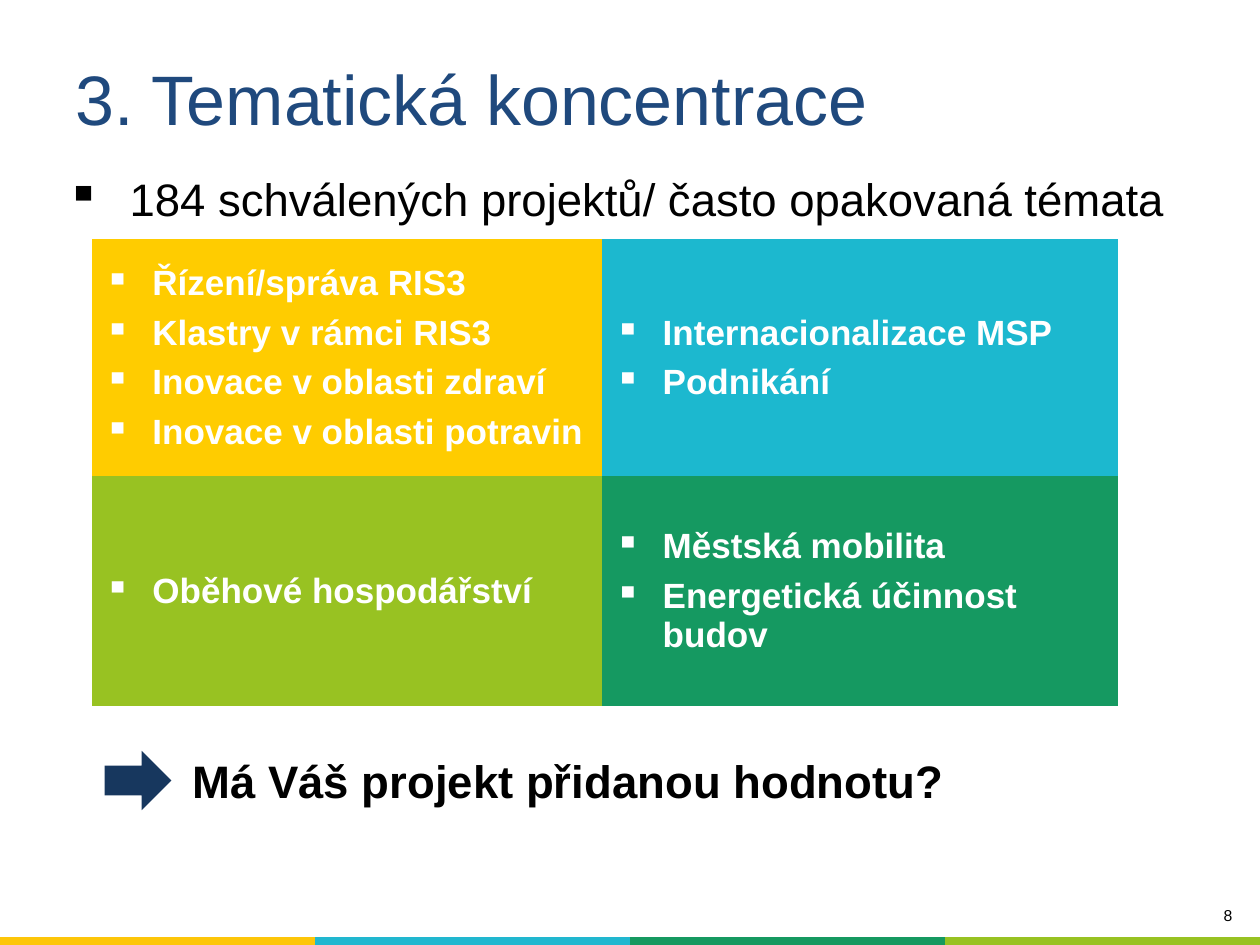
import pptx
import pptx.util
import pptx.dml.color
import pptx.enum.shapes
import pptx.enum.text
from lxml import etree

Inches, Pt = pptx.util.Inches, pptx.util.Pt
ALIGN = pptx.enum.text.PP_ALIGN
MIDDLE = pptx.enum.text.MSO_ANCHOR.MIDDLE
TOP = pptx.enum.text.MSO_ANCHOR.TOP
FONT = "Arial"
PLAIN_TABLE = "{2D5ABB26-0587-4C30-8999-92F81FD0307C}"

# Content: text, box, anchor, bullet indent, paragraph format, font format
TEXTS = [
    ("3. Tematická koncentrace", (0.5, 0.47, 9, 0.61), MIDDLE, 0,
     {}, {"size": 40, "color": "1F497D"}),
    ("184 schválených projektů/ často opakovaná témata", (0.43, 1.31, 8.98, 0.55), TOP, 0.5,
     {}, {"size": 26, "color": "000000"}),
    ("Má Váš projekt přidanou hodnotu?", (1.43, 5.94, 7.9, 0.5), MIDDLE, 0,
     {}, {"size": 26, "color": "000000", "bold": True}),
    ("8", (7.91, 7.14, 1.97, 0.31), TOP, 0,
     {"alignment": ALIGN.RIGHT}, {"size": 9, "color": "000000"}),
]
# Each topic cell: fill, space after, lines
TOPICS = [
    [("FFCC00", 6, ["Řízení/správa RIS3", "Klastry v rámci RIS3",
                    "Inovace v oblasti zdraví", "Inovace v oblasti potravin"]),
     ("1CB8CF", 6, ["Internacionalizace MSP", "Podnikání"])],
    [("98C222", 0, ["Oběhové hospodářství"]),
     ("159961", 6, ["Městská mobilita", "Energetická účinnost budov"])],
]
TOPIC_FONT = {"size": 20, "color": "FFFFFF", "bold": True}
STRIPE = [[(color, 0, []) for color in ("FDC609", "21B7CF", "159960", "98C222")]]


def paint(fill, color):
    fill.solid()
    fill.fore_color.rgb = pptx.dml.color.RGBColor.from_string(color)


def write(paragraph, text, indent, layout, style):
    """Fill one paragraph, with a square bullet when it has an indent."""
    if indent:
        properties = paragraph._p.get_or_add_pPr()
        properties.set("marL", str(Inches(indent)))
        properties.set("indent", str(-Inches(indent)))
        bullet = etree.SubElement(properties, pptx.oxml.ns.qn("a:buChar"))
        bullet.set("char", "▪")
    for name, value in layout.items():
        setattr(paragraph, name, value)
    run = paragraph.add_run()
    run.text = text
    font_values = {"name": FONT, "size": Pt(style["size"]), "bold": style.get("bold", False)}
    for name, value in font_values.items():
        setattr(run.font, name, value)
    paint(run.font.fill, style["color"])


def add_grid(slide, left, top, widths, heights, cells):
    """Add a table of coloured cells with bulleted lines."""
    box = [Inches(v) for v in (left, top, sum(widths), sum(heights))]
    grid = slide.shapes.add_table(len(heights), len(widths), *box).table
    grid._tbl.tblPr.find(pptx.oxml.ns.qn("a:tableStyleId")).text = PLAIN_TABLE
    for column, width in zip(grid.columns, widths):
        column.width = Inches(width)
    for row, height, contents in zip(grid.rows, heights, cells):
        row.height = Inches(height)
        for cell, (color, space_after, lines) in zip(row.cells, contents):
            paint(cell.fill, color)
            cell.vertical_anchor = MIDDLE
            frame = cell.text_frame
            for i, line in enumerate(lines):
                paragraph = frame.add_paragraph() if i else frame.paragraphs[0]
                write(paragraph, line, 0.38, {"space_after": Pt(space_after)}, TOPIC_FONT)


def main():
    deck = pptx.Presentation()
    deck.slide_width, deck.slide_height = Inches(10), Inches(7.5)
    slide = deck.slides.add_slide(deck.slide_layouts[6])

    # Colour stripe along the bottom edge
    add_grid(slide, 0, 7.44, [2.5] * 4, [0.17], STRIPE)

    # Title, lead line, question and page number
    for text, box, anchor, indent, layout, style in TEXTS:
        frame = slide.shapes.add_textbox(*map(Inches, box)).text_frame
        frame.word_wrap = True
        frame.vertical_anchor = anchor
        write(frame.paragraphs[0], text, indent, layout, style)

    # Arrow before the question
    arrow = slide.shapes.add_shape(pptx.enum.shapes.MSO_SHAPE.RIGHT_ARROW,
                                   *map(Inches, (0.83, 5.96, 0.53, 0.47)))
    arrow.shadow.inherit = False
    paint(arrow.fill, "17375E")
    arrow.line.fill.background()

    # Topic table
    add_grid(slide, 0.73, 1.9, [4.05, 4.09], [1.88, 1.82], TOPICS)

    deck.save("out.pptx")


if __name__ == "__main__":
    main()
